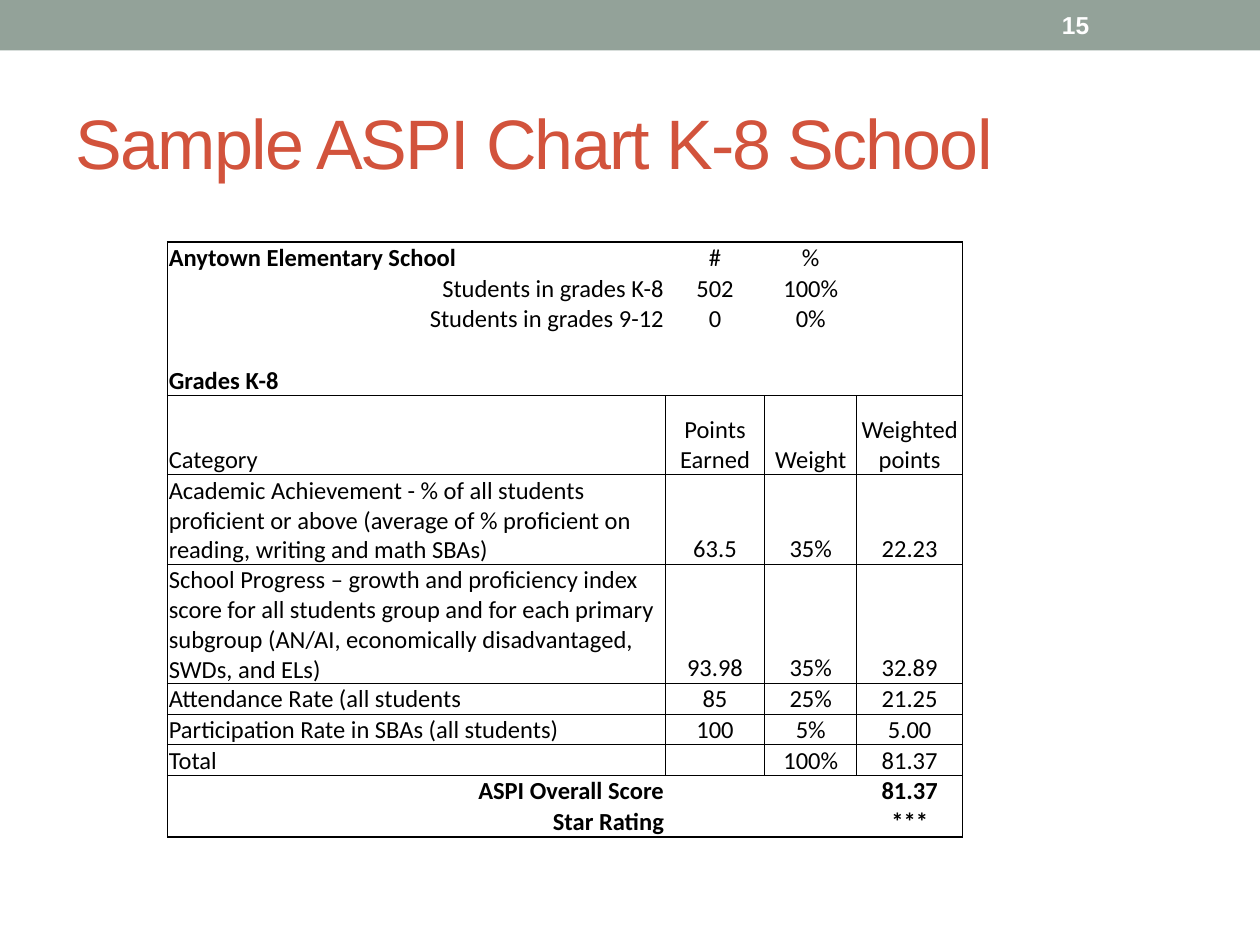
from lxml import etree
from pptx import Presentation
from pptx.dml.color import RGBColor
from pptx.enum.shapes import MSO_SHAPE
from pptx.enum.text import MSO_ANCHOR, MSO_AUTO_SIZE, PP_ALIGN
from pptx.oxml.ns import qn
from pptx.util import Inches, Pt

RECTANGLE = MSO_SHAPE.RECTANGLE
MIDDLE, BOTTOM = MSO_ANCHOR.MIDDLE, MSO_ANCHOR.BOTTOM
LEFT, CENTER, RIGHT = PP_ALIGN.LEFT, PP_ALIGN.CENTER, PP_ALIGN.RIGHT
NO_AUTOFIT = MSO_AUTO_SIZE.NONE

SAGE = RGBColor(0x93, 0xA2, 0x99)
BRICK = RGBColor(0xD2, 0x53, 0x3C)
WHITE = RGBColor(0xFF, 0xFF, 0xFF)
BLACK = RGBColor(0x00, 0x00, 0x00)

COLUMN_WIDTHS = [3.95, 0.79, 0.73, 0.84]
LINE_HEIGHT = 0.23
TALL_ROWS = {5: 0.63, 6: 0.69, 7: 0.92}
GRID_FIRST, GRID_LAST = 5, 10
THICK, THIN = 1, 0.5

SCORES = [
    ["Anytown Elementary School", "#", "%", ""],
    ["Students in grades K-8", "502", "100%", ""],
    ["Students in grades 9-12", "0", "0%", ""],
    ["", "", "", ""],
    ["Grades K-8", "", "", ""],
    ["Category", "Points Earned", "Weight", "Weighted points"],
    ["Academic Achievement - % of all students proficient or above "
     "(average of % proficient on reading, writing and math SBAs)",
     "63.5", "35%", "22.23"],
    ["School Progress – growth and proficiency index score for all students "
     "group and for each primary subgroup (AN/AI, economically disadvantaged, "
     "SWDs, and ELs)", "93.98", "35%", "32.89"],
    ["Attendance Rate (all students", "85", "25%", "21.25"],
    ["Participation Rate in SBAs (all students)", "100", "5%", "5.00"],
    ["Total", "", "100%", "81.37"],
    ["ASPI Overall Score", "", "", "81.37"],
    ["Star Rating", "", "", "***"],
]
RIGHT_LABEL_ROWS = {1, 2, 11, 12}
BOLD_CELLS = {(0, 0), (4, 0), (11, 0), (11, 3), (12, 0), (12, 3)}


def style_runs(paragraph, font_name, size, color, bold=False):
    """Format every run of a paragraph."""
    for run in paragraph.runs:
        run.font.name = font_name
        run.font.size = Pt(size)
        run.font.bold = bold
        run.font.color.rgb = color


def add_header_band(slide):
    """Draw the band across the top of the slide."""
    band = slide.shapes.add_shape(RECTANGLE, 0, 0, Inches(10), Inches(0.4))
    band.shadow.inherit = False
    band.fill.solid()
    band.fill.fore_color.rgb = SAGE
    band.line.fill.background()


def add_page_number(slide, number):
    """Write the page number on the band."""
    page_number = slide.shapes.add_textbox(
        Inches(8.33), Inches(0.02), Inches(1.17), Inches(0.36))
    frame = page_number.text_frame
    frame.word_wrap = True
    frame.vertical_anchor = MIDDLE
    frame.text = number
    style_runs(frame.paragraphs[0], "Arial", 14, WHITE, bold=True)


def set_title(slide, wording):
    """Place and format the title placeholder."""
    title = slide.shapes.title
    title.left, title.top = Inches(0.5), Inches(0.58)
    title.width, title.height = Inches(9), Inches(1.08)
    frame = title.text_frame
    frame.auto_size = NO_AUTOFIT
    frame.vertical_anchor = MIDDLE
    frame.text = wording
    heading = frame.paragraphs[0]
    heading.alignment = LEFT
    style_runs(heading, "Arial", 40, BRICK)
    for run in heading.runs:
        run.font._element.set("spc", "-100")


def border_weights(row, column):
    """Return the left, right, top and bottom line weights of a cell."""
    last_row, last_column = len(SCORES) - 1, len(COLUMN_WIDTHS) - 1
    in_grid = GRID_FIRST <= row <= GRID_LAST
    inner = THIN if in_grid else 0
    return {
        "lnL": THICK if column == 0 else inner,
        "lnR": THICK if column == last_column else inner,
        "lnT": THICK if row == 0 else
        THIN if in_grid or row == GRID_LAST + 1 else 0,
        "lnB": THICK if row == last_row else
        THIN if in_grid or row == GRID_FIRST - 1 else 0,
    }


def set_borders(cell, weights):
    """Give each side of a cell its line, or none for zero weight."""
    properties = cell._tc.get_or_add_tcPr()
    for side, weight in weights.items():
        line = etree.SubElement(properties, qn(f"a:{side}"), w=str(Pt(weight)))
        if weight:
            fill = etree.SubElement(line, qn("a:solidFill"))
            etree.SubElement(fill, qn("a:srgbClr"), val=str(BLACK))
        else:
            etree.SubElement(line, qn("a:noFill"))


def fill_cell(cell, wording, alignment, bold):
    """Write and format the text of one cell."""
    cell.margin_left = cell.margin_right = cell.margin_top = Inches(0.01)
    cell.margin_bottom = 0
    cell.vertical_anchor = BOTTOM
    cell.fill.background()
    paragraph = cell.text_frame.paragraphs[0]
    paragraph.alignment = alignment
    if wording:
        paragraph.text = wording
        style_runs(paragraph, "Calibri", 14, BLACK, bold)
    else:
        ending = etree.SubElement(paragraph._p, qn("a:endParaRPr"), sz="1400")
        etree.SubElement(ending, qn("a:latin"), typeface="Calibri")


def add_score_table(slide):
    """Build the table of school scores."""
    heights = [TALL_ROWS.get(row, LINE_HEIGHT) for row in range(len(SCORES))]
    table = slide.shapes.add_table(
        len(SCORES), len(COLUMN_WIDTHS), Inches(1.33), Inches(1.92),
        Inches(sum(COLUMN_WIDTHS)), Inches(sum(heights))).table
    table.first_row = table.horz_banding = False
    for column, width in zip(table.columns, COLUMN_WIDTHS):
        column.width = Inches(width)
    for row, height in zip(table.rows, heights):
        row.height = Inches(height)
    for row, entries in enumerate(SCORES):
        label_alignment = RIGHT if row in RIGHT_LABEL_ROWS else LEFT
        for column, wording in enumerate(entries):
            cell = table.cell(row, column)
            set_borders(cell, border_weights(row, column))
            fill_cell(cell, wording, CENTER if column else label_alignment,
                      (row, column) in BOLD_CELLS)


def main():
    """Build and save the slide."""
    deck = Presentation()
    deck.slide_width, deck.slide_height = Inches(10), Inches(7.5)
    slide = deck.slides.add_slide(deck.slide_layouts[5])
    add_header_band(slide)
    set_title(slide, "Sample ASPI Chart K-8 School")
    add_page_number(slide, "15")
    add_score_table(slide)
    deck.save("out.pptx")


if __name__ == "__main__":
    main()
